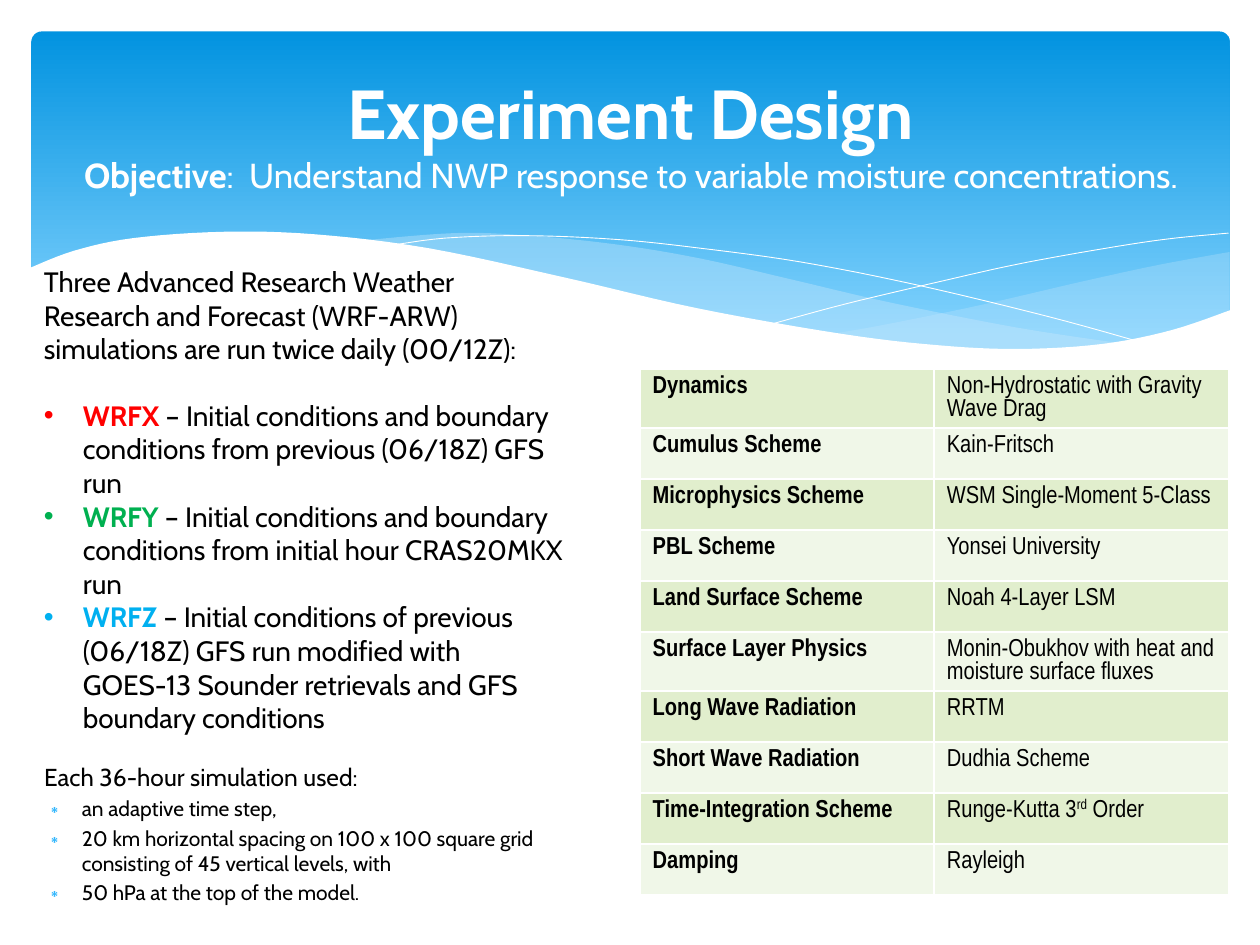
from dataclasses import dataclass
from typing import NamedTuple

from lxml.etree import SubElement
from pptx import Presentation
from pptx.dml.color import RGBColor
from pptx.enum.shapes import MSO_SHAPE
from pptx.enum.text import MSO_ANCHOR, MSO_AUTO_SIZE, PP_ALIGN
from pptx.oxml.ns import qn
from pptx.util import Inches, Pt

Point = tuple[float, float]


class Span(NamedTuple):
    text: str
    size: float
    color: str = "000000"
    bold: bool = False
    font: str = "Cabin"
    raised: bool = False


@dataclass
class Wave:
    """A shape bounded by smooth edges, or an open line when it has no fill."""
    edges: list[list[Point]]
    fill: str | None = None
    opacity: int = 100


WAVES = [
    Wave([[(9.76, 2), (9.21, 2.1), (8.61, 2.23), (7.79, 2.42), (7.06, 2.57), (6.61, 2.65)],
          [(6.61, 2.65), (7.19, 2.72), (7.69, 2.77), (8.14, 2.78), (8.63, 2.75),
           (9.13, 2.67), (9.49, 2.57), (9.76, 2.47)]], "C6E7FC", 29),
    Wave([[(8.93, 2.73), (8.07, 2.6), (7.06, 2.4), (6.29, 2.22), (5.55, 2.05),
           (4.89, 1.94), (4.2, 1.87), (3.61, 1.85), (2.86, 1.91)],
          [(2.86, 1.91), (3.62, 2.03), (4.49, 2.22), (5.3, 2.4), (6.18, 2.58),
           (6.95, 2.7), (7.61, 2.77), (8.28, 2.78), (8.93, 2.73)]], "C6E7FC", 40),
    Wave([[(3.09, 1.95), (3.53, 1.89), (4.16, 1.87), (4.89, 1.9), (5.56, 1.97),
           (6.36, 2.08), (7.27, 2.26), (8.31, 2.51), (9.07, 2.72)]]),
    Wave([[(6.13, 2.57), (6.72, 2.41), (7.48, 2.23), (8.06, 2.1), (8.66, 1.99),
           (9.24, 1.9), (9.75, 1.85)]]),
    Wave([[(0.23, 2.13), (0.59, 1.99), (1.06, 1.89), (1.77, 1.84), (2.5, 1.86),
           (3.4, 1.97), (4.47, 2.2), (5.55, 2.45), (6.68, 2.65), (7.44, 2.74),
           (8.09, 2.77), (8.75, 2.73), (9.3, 2.62), (9.77, 2.46)],
          [(9.77, 3.29), (0.23, 3.29)]], "FFFFFF"),
]

SETTINGS = [
    ("Dynamics", ["Non-Hydrostatic with Gravity Wave Drag"]),
    ("Cumulus Scheme", ["Kain-Fritsch"]),
    ("Microphysics Scheme", ["WSM Single-Moment 5-Class"]),
    ("PBL Scheme", ["Yonsei University"]),
    ("Land Surface Scheme", ["Noah 4-Layer LSM"]),
    ("Surface Layer Physics", ["Monin-Obukhov with heat and moisture surface fluxes"]),
    ("Long Wave Radiation", ["RRTM"]),
    ("Short Wave Radiation", ["Dudhia Scheme"]),
    ("Time-Integration Scheme", ["Runge-Kutta 3", "rd", " Order"]),
    ("Damping", ["Rayleigh"]),
]

RUNS = [
    ("WRFX ", "FF0000", "– Initial conditions and boundary conditions from previous "
     "(06/18Z) GFS run"),
    ("WRFY ", "00B050", "– Initial conditions and boundary conditions from initial hour "
     "CRAS20MKX run"),
    ("WRFZ ", "00B0F0", "– Initial conditions of previous (06/18Z) GFS run modified with "
     "GOES-13 Sounder retrievals and GFS boundary conditions"),
]

DETAILS = [
    "an adaptive time step,",
    "20 km horizontal spacing on 100 x 100 square grid consisting of 45 vertical levels, with",
    "50 hPa at the top of the model.",
]


def rgb(color: str) -> RGBColor:
    return RGBColor.from_string(color)


def smooth(points: list[Point], steps: int = 6) -> list[Point]:
    """Return a Catmull-Rom curve through the points."""
    if len(points) < 3:
        return points
    padded = [points[0], *points, points[-1]]
    curve = [points[0]]
    for a, b, c, d in zip(padded, padded[1:], padded[2:], padded[3:]):
        for step in range(1, steps + 1):
            t = step / steps
            curve.append(tuple(
                (2 * q + (r - p) * t + (2 * p - 5 * q + 4 * r - s) * t**2
                 + (3 * q - p - 3 * r + s) * t**3) / 2
                for p, q, r, s in zip(a, b, c, d)))
    return curve


def draw_banner(page) -> None:
    banner = page.shapes.add_shape(MSO_SHAPE.ROUNDED_RECTANGLE, Inches(0.25), Inches(0.25),
                                   Inches(9.51), Inches(2.7))
    banner.adjustments[0] = 0.03
    banner.shadow.inherit = False
    banner.line.fill.background()
    banner.fill.gradient()
    banner.fill.gradient_angle = 270
    for stop, color, position in zip(banner.fill.gradient_stops, ("0293E0", "83D3FE"), (0, 0.9)):
        stop.color.rgb = rgb(color)
        stop.position = position


def draw_wave(page, wave: Wave) -> None:
    points = [(Inches(x), Inches(y)) for edge in wave.edges for x, y in smooth(edge)]
    builder = page.shapes.build_freeform(*points[0])
    builder.add_line_segments(points[1:], close=wave.fill is not None)
    shape = builder.convert_to_shape()
    shape.shadow.inherit = False
    if wave.fill is None:
        shape.fill.background()
        shape.line.color.rgb = rgb("FFFFFF")
        shape.line.width = Pt(0.5)
        return
    shape.line.fill.background()
    shape.fill.solid()
    shape.fill.fore_color.rgb = rgb(wave.fill)
    if wave.opacity < 100:
        color = shape.element.spPr.find(f"{qn('a:solidFill')}/{qn('a:srgbClr')}")
        SubElement(color, qn("a:alpha"), val=str(wave.opacity * 1000))


def write(para, *spans: Span) -> None:
    for span in spans:
        run = para.add_run()
        run.text = span.text
        run.font.size = Pt(span.size)
        run.font.name = span.font
        run.font.bold = span.bold
        run.font.color.rgb = rgb(span.color)
        if span.raised:
            run.font._element.set("baseline", "30000")


def set_bullet(para, mark: str | None, indent: float = 0, color: str | None = None) -> None:
    properties = para._p.get_or_add_pPr()
    properties.set("marL", str(Inches(indent)))
    properties.set("indent", str(-Inches(indent)))
    if mark is None:
        SubElement(properties, qn("a:buNone"))
        return
    if color:
        SubElement(SubElement(properties, qn("a:buClr")), qn("a:srgbClr"), val=color)
    SubElement(properties, qn("a:buFont"), typeface="Arial")
    SubElement(properties, qn("a:buChar"), char=mark)


def place(box, left: float, top: float, width: float, height: float):
    """Move the box in front of everything drawn so far and return its text frame."""
    box.left, box.top, box.width, box.height = map(Inches, (left, top, width, height))
    box.element.getparent().append(box.element)
    frame = box.text_frame
    frame.word_wrap = True
    frame.auto_size = MSO_AUTO_SIZE.NONE
    return frame


def write_title(page) -> None:
    frame = place(page.shapes.title, 0.42, 0.37, 9.17, 1.37)
    frame.vertical_anchor = MSO_ANCHOR.MIDDLE
    para = frame.paragraphs[0]
    para.alignment = PP_ALIGN.CENTER
    write(para, Span("Experiment Design", 39.6, "FFFFFF", True))
    para.add_line_break()
    write(para, Span("Objective", 19.8, "FFFFFF", True),
          Span(":  Understand NWP response to variable moisture concentrations.", 19.8, "FFFFFF"))


def draw_settings(page) -> None:
    table = page.shapes.add_table(len(SETTINGS), 2, Inches(5.08), Inches(2.93),
                                  Inches(4.67), Inches(4.05)).table
    for row, (name, parts) in enumerate(SETTINGS):
        values = [Span(part, 14, font="Arial Narrow", raised=part == "rd") for part in parts]
        for column, spans in enumerate([[Span(name, 14, bold=True, font="Arial Narrow")], values]):
            cell = table.cell(row, column)
            for side in ("a:lnL", "a:lnR", "a:lnT", "a:lnB"):
                border = SubElement(cell._tc.get_or_add_tcPr(), qn(side), w=str(Pt(1)))
                SubElement(SubElement(border, qn("a:solidFill")), qn("a:srgbClr"), val="FFFFFF")
            cell.fill.solid()
            cell.fill.fore_color.rgb = rgb("F0F7E8" if row % 2 else "E1EECD")
            write(cell.text_frame.paragraphs[0], *spans)


def write_details(page) -> None:
    frame = place(page.placeholders[1], 0.25, 6, 4.33, 1.33)
    heading = frame.paragraphs[0]
    set_bullet(heading, None)
    write(heading, Span("Each 36-hour simulation used:", 14))
    for detail in DETAILS:
        para = frame.add_paragraph()
        set_bullet(para, "∗", 0.3, "31B6FD")
        write(para, Span(detail, 12))


def write_runs(page) -> None:
    frame = place(page.shapes.add_textbox(0, 0, 0, 0), 0.25, 2.05, 4.33, 3.87)
    intro = frame.paragraphs[0]
    intro.space_after = Pt(19)
    write(intro, Span("Three Advanced Research Weather Research and Forecast (WRF-ARW) "
                      "simulations are run twice daily (00/12Z):", 16))
    for name, color, description in RUNS:
        para = frame.add_paragraph()
        set_bullet(para, "•", 0.31, color)
        write(para, Span(name, 16, color, True), Span(description, 16))


def main() -> None:
    deck = Presentation()
    deck.slide_width, deck.slide_height = Inches(10), Inches(7.5)
    page = deck.slides.add_slide(deck.slide_layouts[1])
    draw_banner(page)
    for wave in WAVES:
        draw_wave(page, wave)
    write_title(page)
    draw_settings(page)
    write_details(page)
    write_runs(page)
    deck.save("out.pptx")


if __name__ == "__main__":
    main()
